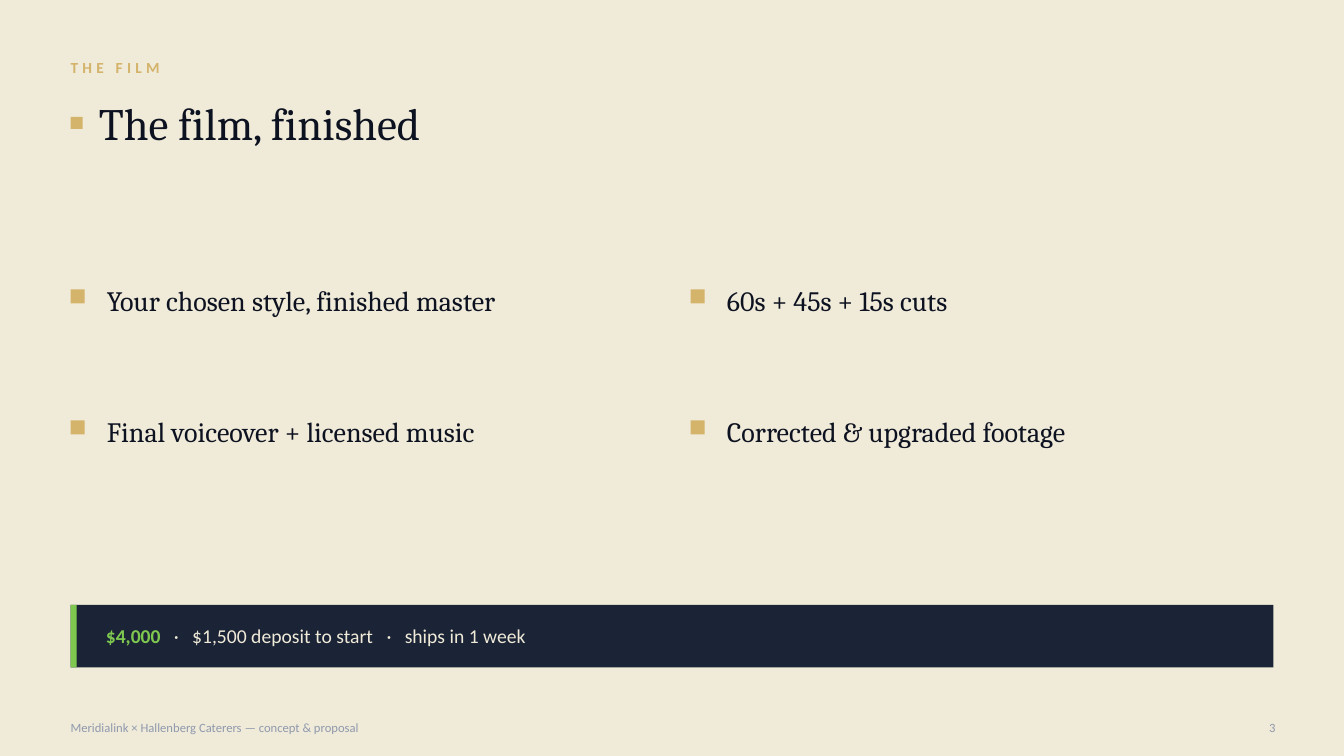
import pptx
import pptx.dml.color
import pptx.enum.shapes
import pptx.enum.text
import pptx.util

COLORS = {
    "paper": "F0EAD9",
    "gold": "D4B36A",
    "ink": "0D1220",
    "navy": "1B2436",
    "green": "7EC850",
    "muted": "8F99AD",
}
COLUMNS, ROWS = 133.3, 75
LEFT = 7
BAND_TOP, BAND_HEIGHT = 60, 6.2
FOOTER_TOP, FOOTER_HEIGHT = 70.8, 2.8


def color(name):
    return pptx.dml.color.RGBColor.from_string(COLORS[name])


class Slide:
    cell = pptx.util.Inches(0.1)
    frame_format = {
        "margin_left": 0,
        "margin_top": 0,
        "margin_right": 0,
        "margin_bottom": 0,
        "word_wrap": True,
        "auto_size": pptx.enum.text.MSO_AUTO_SIZE.NONE,
        "vertical_anchor": pptx.enum.text.MSO_ANCHOR.MIDDLE,
    }
    styles = {
        "eyebrow": {"name": "Calibri", "size": 11, "bold": True, "color": "gold", "spacing": 3},
        "title": {"name": "Cambria", "size": 32, "color": "ink"},
        "item": {"name": "Cambria", "size": 20, "color": "ink"},
        "price": {"name": "Calibri", "size": 14, "bold": True, "color": "green"},
        "terms": {"name": "Calibri", "size": 14, "color": "paper"},
        "gap": {"name": "Calibri", "size": 14, "color": "paper", "spacing": 6.3},
        "footer": {"name": "Calibri", "size": 9, "color": "muted"},
    }

    def __init__(self, deck):
        deck.slide_width = self.grid(COLUMNS)
        deck.slide_height = self.grid(ROWS)
        self.page = deck.slides.add_slide(deck.slide_layouts.get_by_name("Title Only"))
        self.page.background.fill.solid()
        self.page.background.fill.fore_color.rgb = color("paper")

    def grid(self, count):
        return pptx.util.Emu(round(count * self.cell))

    def place(self, *lengths):
        return [self.grid(length) for length in lengths]

    def fill_text(self, box, spans, align="LEFT"):
        for key, value in self.frame_format.items():
            setattr(box.text_frame, key, value)
        para = box.text_frame.paragraphs[0]
        para.alignment = getattr(pptx.enum.text.PP_ALIGN, align)
        for text, style in spans:
            span = para.add_run()
            span.text = text
            values = dict(self.styles[style])
            span.font.color.rgb = color(values.pop("color"))
            spacing = values.pop("spacing", None)
            if spacing:
                span._r.get_or_add_rPr().set("spc", str(round(spacing * 100)))
            values["size"] = pptx.util.Pt(values["size"])
            for key, value in values.items():
                setattr(span.font, key, value)

    def title(self, text, *place):
        box = self.page.shapes.title
        names = ("left", "top", "width", "height")
        for key, value in zip(names, self.place(*place)):
            setattr(box, key, value)
        self.fill_text(box, [(text, "title")])

    def text(self, spans, *place, align="LEFT"):
        self.fill_text(self.page.shapes.add_textbox(*self.place(*place)), spans, align)

    def block(self, fill, *place):
        shape = self.page.shapes.add_shape(
            pptx.enum.shapes.MSO_SHAPE.RECTANGLE, *self.place(*place)
        )
        shape.shadow.inherit = False
        shape.fill.solid()
        shape.fill.fore_color.rgb = color(fill)
        shape.line.fill.background()

    def item(self, text, left, top):
        self.block("gold", left, top + 1.2, 1.4, 1.4)
        self.text([(text, "item")], left + 3.6, top, 55.5, 4.5)


def main():
    deck = pptx.Presentation()
    slide = Slide(deck)

    slide.text([("THE FILM", "eyebrow")], LEFT, 5.2, 119, 3)
    slide.block("gold", LEFT, 11.6, 1.2, 1.2)
    slide.title("The film, finished", 9.8, 8.7, 116, 7)

    items = [
        "Your chosen style, finished master",
        "60s + 45s + 15s cuts",
        "Final voiceover + licensed music",
        "Corrected & upgraded footage",
    ]
    for index, text in enumerate(items):
        row, column = divmod(index, 2)
        slide.item(text, LEFT + column * 61.5, 27.5 + row * 13)

    slide.block("navy", LEFT, BAND_TOP, 119.3, BAND_HEIGHT)
    slide.block("green", LEFT, BAND_TOP, 0.6, BAND_HEIGHT)
    offer = [("$4,000", "price")]
    for term in ("$1,500 deposit to start", "ships in 1 week"):
        offer += [(" ", "gap"), ("·", "terms"), (" ", "gap"), (term, "terms")]
    slide.text(offer, 10.5, BAND_TOP, 112.3, BAND_HEIGHT)

    credit = "Meridialink × Hallenberg Caterers — concept & proposal"
    slide.text([(credit, "footer")], LEFT, FOOTER_TOP, 65, FOOTER_HEIGHT)
    slide.text([("3", "footer")], 122, FOOTER_TOP, 4.5, FOOTER_HEIGHT, align="RIGHT")

    deck.save("out.pptx")


if __name__ == "__main__":
    main()
